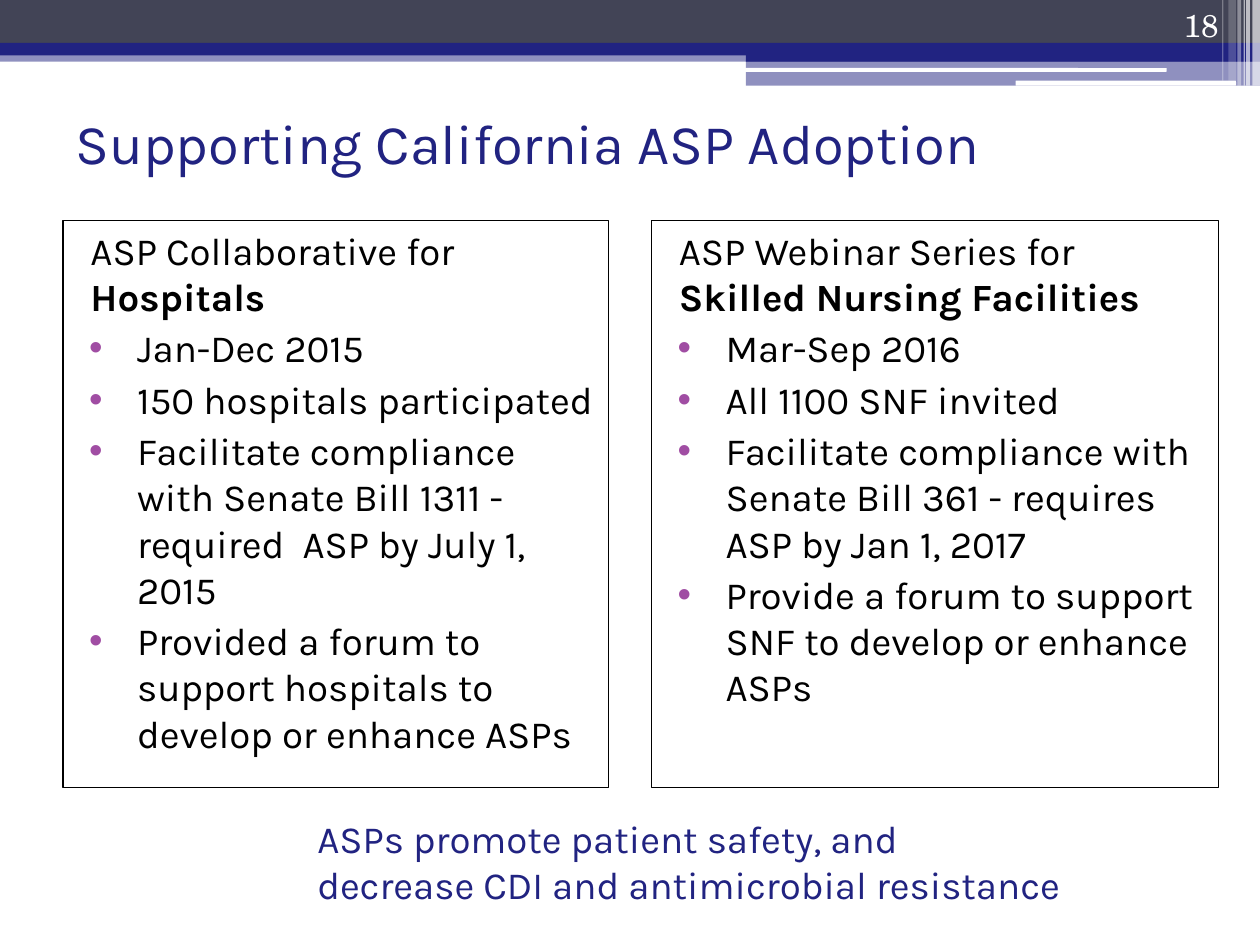
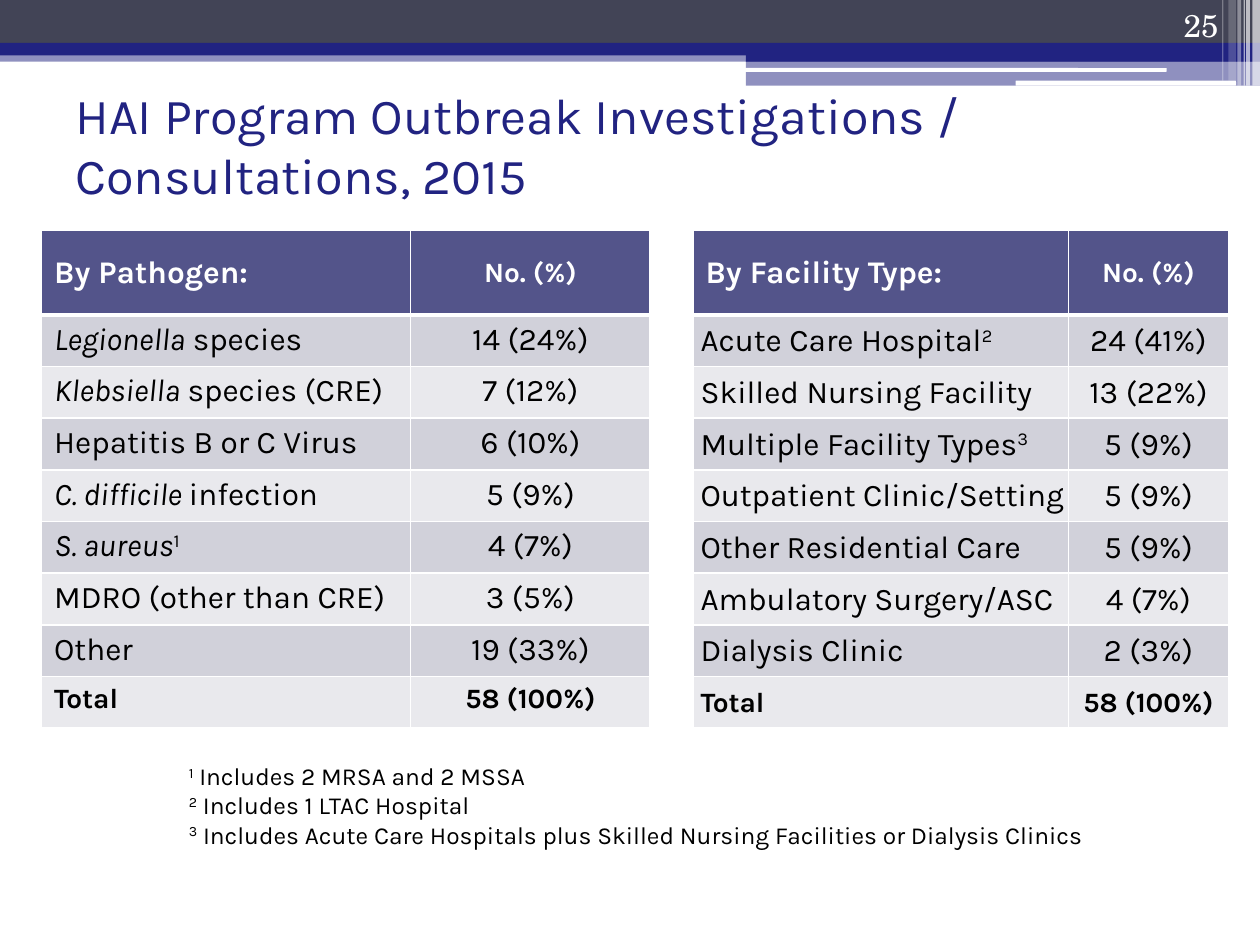
from lxml.etree import SubElement
from pptx import Presentation
from pptx.dml.color import RGBColor
from pptx.enum.shapes import MSO_SHAPE
from pptx.enum.text import MSO_ANCHOR, PP_ALIGN
from pptx.oxml.ns import qn
from pptx.util import Inches, Pt

NAVY = RGBColor(0x21, 0x23, 0x81)
SLATE = RGBColor(0x42, 0x44, 0x56)
PURPLE = RGBColor(0xA0, 0x4D, 0xA3)
HEADER = RGBColor(0x53, 0x54, 0x8A)
ROW_DARK = RGBColor(0xD1, 0xD1, 0xDA)
ROW_LIGHT = RGBColor(0xE9, 0xE9, 0xED)
WHITE = RGBColor(0xFF, 0xFF, 0xFF)
BLACK = RGBColor(0x00, 0x00, 0x00)
BODY_FONT = "Karla"
NUMBER_FONT = "TeX Gyre Schola"

BANDS = [
    (0, 0.4, 10, 0.09, NAVY, 50),
    (0, 0, 10, 0.34, SLATE, 100),
    (0, 0.34, 10, 0.1, NAVY, 100),
    (5.92, 0.39, 4.08, 0.1, NAVY, 100),
    (5.92, 0.48, 4.08, 0.2, NAVY, 50),
]
WHITE_BARS = [(5.91, 0.54, 3.35, 0.03), (8.06, 0.64, 1.75, 0.04)]
STRIPES = [
    (9.94, 0.06, 0.68, 65), (9.89, 0.03, 0.68, 65), (9.87, 0.01, 0.68, 60),
    (9.82, 0.03, 0.68, 40), (9.75, 0.06, 0.64, 20), (9.7, 0.01, 0.64, 30),
]

HOSPITALS = [
    [("ASP Collaborative for ", ""), ("Hospitals", "bold")],
    "Jan-Dec 2015",
    "150 hospitals participated",
    "Facilitate compliance with Senate Bill 1311 - required  ASP by July 1, 2015",
    "Provided a forum to support hospitals to develop or enhance ASPs",
]
NURSING = [
    [("ASP Webinar Series for ", ""), ("Skilled Nursing Facilities", "bold")],
    "Mar-Sep 2016",
    "All 1100 SNF invited",
    "Facilitate compliance with Senate Bill 361 - requires ASP by Jan 1, 2017",
    "Provide a forum to support SNF to develop or enhance ASPs",
]
PATHOGENS = [
    ("By Pathogen:", "No. (%)"),
    ([("Legionella", "italic"), (" species", "")], "14 (24%)"),
    ([("Klebsiella", "italic"), (" species (CRE)", "")], "7 (12%)"),
    ("Hepatitis B or C Virus", "6 (10%)"),
    ([("C. difficile ", "italic"), ("infection", "")], "5 (9%)"),
    ([("S. aureus", "italic"), ("1", "super")], "4 (7%)"),
    ("MDRO (other than CRE)", "3 (5%)"),
    ("Other", "19 (33%)"),
    ("Total", "58 (100%)"),
]
FACILITIES = [
    ("By Facility Type:", "No. (%)"),
    ([("Acute Care Hospital", ""), ("2", "super")], "24 (41%)"),
    ("Skilled Nursing Facility", "13 (22%)"),
    ([("Multiple Facility Types", ""), ("3", "super")], "5 (9%)"),
    ("Outpatient Clinic/Setting", "5 (9%)"),
    ("Other Residential Care", "5 (9%)"),
    ("Ambulatory Surgery/ASC", "4 (7%)"),
    ("Dialysis Clinic", "2 (3%)"),
    ("Total", "58 (100%)"),
]
FOOTNOTES = [
    [("1", "super"), (" Includes 2 MRSA and 2 MSSA", "")],
    [("2", "super"), (" Includes 1 LTAC Hospital", "")],
    [("3", "super"), (" Includes Acute Care Hospitals plus Skilled Nursing "
                      "Facilities or Dialysis Clinics", "")],
]


def write(p, content, size=22, color=BLACK, font=BODY_FONT, bold=False,
          align=PP_ALIGN.LEFT):
    p.alignment = align
    runs = [(content, "")] if isinstance(content, str) else content
    for text, style in runs:
        r = p.add_run()
        r.text = text
        r.font.name = font
        r.font.size = Pt(size)
        r.font.color.rgb = color
        r.font.bold = bold or style == "bold"
        r.font.italic = style == "italic"
        if style == "super":
            r._r.get_or_add_rPr().set("baseline", "30000")


def add_text(s, box, paragraphs, anchor=MSO_ANCHOR.TOP, **text_format):
    tf = s.shapes.add_textbox(*map(Inches, box)).text_frame
    tf.word_wrap = True
    tf.vertical_anchor = anchor
    for i, content in enumerate(paragraphs):
        p = tf.paragraphs[0] if i == 0 else tf.add_paragraph()
        write(p, content, **text_format)


def add_block(s, box, color, opacity=100, kind=MSO_SHAPE.RECTANGLE):
    sp = s.shapes.add_shape(kind, *map(Inches, box))
    sp.shadow.inherit = False
    sp.line.fill.background()
    sp.fill.solid()
    sp.fill.fore_color.rgb = color
    if opacity < 100:
        rgb = sp._element.spPr.find(".//" + qn("a:srgbClr"))
        SubElement(rgb, qn("a:alpha")).set("val", str(opacity * 1000))


def set_indent(p, left, first=0, bullet=None):
    pPr = p._p.get_or_add_pPr()
    pPr.set("marL", str(Inches(left)))
    pPr.set("indent", str(Inches(first)))
    if bullet:
        bu_color = SubElement(pPr, qn("a:buClr"))
        SubElement(bu_color, qn("a:srgbClr")).set("val", str(PURPLE))
        SubElement(pPr, qn("a:buFont")).set("typeface", "Arial")
        SubElement(pPr, qn("a:buChar")).set("char", bullet)


def add_panel(s, left, width, paragraphs):
    sp = s.shapes.add_shape(MSO_SHAPE.RECTANGLE, Inches(left), Inches(1.75),
                            Inches(width), Inches(4.5))
    sp.shadow.inherit = False
    sp.fill.background()
    sp.line.color.rgb = BLACK
    sp.line.width = Pt(0.75)
    tf = sp.text_frame
    tf.word_wrap = True
    tf.vertical_anchor = MSO_ANCHOR.TOP
    heading, *items = paragraphs
    set_indent(tf.paragraphs[0], 0.12)
    write(tf.paragraphs[0], heading)
    for item in items:
        p = tf.add_paragraph()
        set_indent(p, 0.49, -0.38, "•")
        p.space_before = Pt(3)
        write(p, item)


def set_borders(cell, top, bottom):
    tcPr = cell._tc.get_or_add_tcPr()
    for side, width in (("L", 1), ("R", 1), ("T", top), ("B", bottom)):
        ln = SubElement(tcPr, qn("a:ln" + side))
        ln.set("w", str(Pt(width)))
        fill = SubElement(ln, qn("a:solidFill"))
        SubElement(fill, qn("a:srgbClr")).set("val", str(WHITE))


def set_margins(cell, left, right, top, bottom):
    cell.margin_left, cell.margin_right = Inches(left), Inches(right)
    cell.margin_top, cell.margin_bottom = Inches(top), Inches(bottom)


def add_counts(s, left, widths, rows, tight=False):
    table = s.shapes.add_table(len(rows), 2, Inches(left), Inches(1.83),
                               Inches(sum(widths)), Inches(3.91)).table
    for column, width in zip(table.columns, widths):
        column.width = Inches(width)
    last = len(rows) - 1
    for i, row in enumerate(rows):
        header, total = i == 0, i == last
        table.rows[i].height = Inches(0.67 if header else 0.41)
        for j, content in enumerate(row):
            cell = table.cell(i, j)
            set_borders(cell, 3 if i == 1 else 1, 3 if header else 1)
            cell.fill.solid()
            cell.fill.fore_color.rgb = (
                HEADER if header else ROW_DARK if i % 2 else ROW_LIGHT)
            cell.vertical_anchor = (
                MSO_ANCHOR.MIDDLE if header or tight else MSO_ANCHOR.TOP)
            if tight and not header:
                set_margins(cell, 0.01 if j else 0.06, 0.01, 0.01, 0)
            write(cell.text_frame.paragraphs[0], content,
                  size=16 if total or (header and j) else 18,
                  color=WHITE if header else BLACK, bold=header or total,
                  align=PP_ALIGN.CENTER if j else PP_ALIGN.LEFT)


def add_base(prs, number, title, title_box, title_size):
    s = prs.slides.add_slide(prs.slide_layouts[6])
    for *box, color, opacity in BANDS:
        add_block(s, box, color, opacity)
    for box in WHITE_BARS:
        add_block(s, box, WHITE, kind=MSO_SHAPE.ROUNDED_RECTANGLE)
    for left, width, height, opacity in STRIPES:
        add_block(s, (left, 0, width, height), WHITE, opacity)
    add_text(s, title_box, [title], MSO_ANCHOR.MIDDLE, size=title_size,
             color=NAVY)
    add_text(s, (8.94, 0, 0.83, 0.4), [number], MSO_ANCHOR.BOTTOM, size=18,
             color=WHITE, font=NUMBER_FONT, align=PP_ALIGN.RIGHT)
    return s


def main():
    prs = Presentation()
    prs.slide_width, prs.slide_height = Inches(10), Inches(7.5)

    s = add_base(prs, "18", "Supporting California ASP Adoption",
                 (0.5, 0.54, 9, 1.17), 32)
    add_panel(s, 0.5, 4.33, HOSPITALS)
    add_panel(s, 5.17, 4.5, NURSING)
    add_text(s, (2.42, 6.42, 6.67, 0.84),
             ["ASPs promote patient safety, and",
              "decrease CDI and antimicrobial resistance"], color=NAVY)

    s = add_base(prs, "25",
                 "HAI Program Outbreak Investigations / Consultations, 2015",
                 (0.5, 0.79, 9, 0.71), 28.8)
    add_counts(s, 0.33, (2.93, 1.9), PATHOGENS)
    add_counts(s, 5.5, (2.98, 1.27), FACILITIES, tight=True)
    add_text(s, (1.4, 5.99, 8.52, 1.01), FOOTNOTES, size=14)

    prs.save("out.pptx")


if __name__ == "__main__":
    main()
